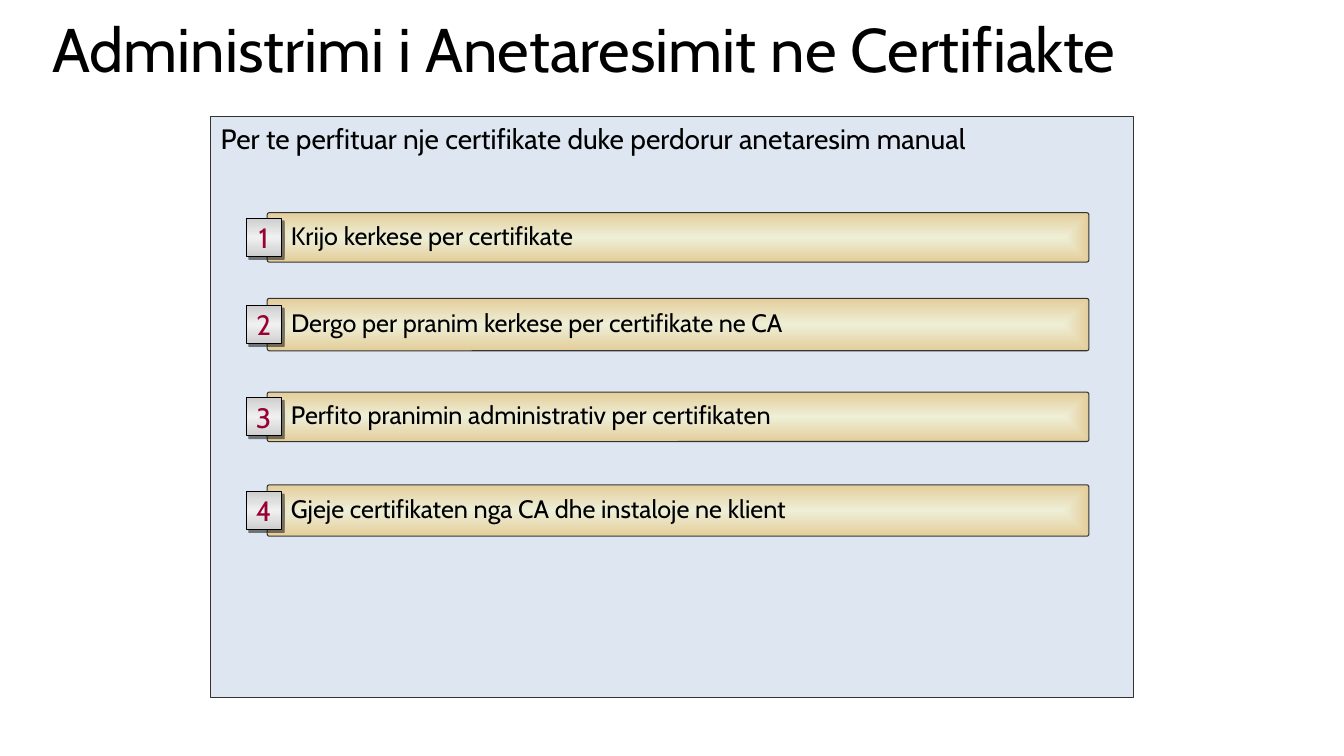
"""Builds a slide listing the four steps of manual certificate enrollment."""
from pptx import Presentation
from pptx.dml.color import RGBColor
from pptx.enum.shapes import MSO_SHAPE
from pptx.enum.text import MSO_ANCHOR, PP_ALIGN
from pptx.oxml import parse_xml
from pptx.oxml.ns import nsdecls, qn
from pptx.util import Inches, Pt

RECTANGLE, ROUNDED = MSO_SHAPE.RECTANGLE, MSO_SHAPE.ROUNDED_RECTANGLE
TOP, MIDDLE = MSO_ANCHOR.TOP, MSO_ANCHOR.MIDDLE
LEFT, CENTER = PP_ALIGN.LEFT, PP_ALIGN.CENTER
FONT = "Cabin"
COLORS = {
    "text": "000000", "number": "990033", "panel": "DEE7F1", "outline": "333333",
    "bar_center": "EEEFD7", "bar_edge": "E4CD9A",
    "badge_edge": "CECECE", "badge_center": "F0F0F0", "badge_outline": "000000",
}
BAR_STOPS = [(0, "bar_center"), (100, "bar_edge")]
BAR_SHADE = ('<a:path path="rect"><a:fillToRect l="50000" t="50000" '
             'r="50000" b="50000"/></a:path>')
BADGE_STOPS = [(0, "badge_edge"), (50, "badge_center"), (100, "badge_edge")]
BADGE_SHADE = '<a:lin ang="5400000" scaled="0"/>'
BADGE_SHADOW = (f'<a:outerShdw {nsdecls("a")} blurRad="0" dist="{Pt(2.8)}" dir="2700000" '
                'algn="ctr" rotWithShape="0"><a:srgbClr val="000000">'
                '<a:alpha val="50000"/></a:srgbClr></a:outerShdw>')

BAR_LEFT, BAR_WIDTH = 2.65, 8.15
BADGE_LEFT, BADGE_WIDTH, BADGE_HEIGHT = 2.44, 0.35, 0.38
STEPS = [
    (2.11, 0.49, "Krijo kerkese per certifikate"),
    (2.96, 0.52, "Dergo per pranim kerkese per certifikate ne CA"),
    (3.89, 0.49, "Perfito pranimin administrativ per certifikaten"),
    (4.81, 0.51, "Gjeje certifikaten nga CA dhe instaloje ne klient"),
]


def write(shape, text, size, color, line_spacing=1.0, alignment=LEFT, **frame_format):
    frame = shape.text_frame
    frame.text = text
    for name, value in frame_format.items():
        setattr(frame, name, value)
    paragraph = frame.paragraphs[0]
    paragraph.alignment = alignment
    paragraph.line_spacing = line_spacing
    font = paragraph.runs[0].font
    for name, value in {"name": FONT, "size": Pt(size), "bold": False}.items():
        setattr(font, name, value)
    font.color.rgb = RGBColor.from_string(COLORS[color])


def add_box(kind, box, outline, stops=(), shade=""):
    shape = slide.shapes.add_shape(kind, *map(Inches, box))
    shape.shadow.inherit = False
    if stops:
        marks = "".join(f'<a:gs pos="{position * 1000}"><a:srgbClr val="{COLORS[color]}"/></a:gs>'
                        for position, color in stops)
        gradient = parse_xml(f'<a:gradFill {nsdecls("a")} rotWithShape="1">'
                             f'<a:gsLst>{marks}</a:gsLst>{shade}</a:gradFill>')
        shape._element.spPr.find(qn("a:prstGeom")).addnext(gradient)
    shape.line.color.rgb = RGBColor.from_string(COLORS[outline])
    shape.line.width = Pt(0.75)
    return shape


presentation = Presentation()
presentation.slide_width = Inches(13.33)
presentation.slide_height = Inches(7.5)
slide = presentation.slides.add_slide(presentation.slide_layouts[5])

title = slide.shapes.title
for name, value in {"left": 0.42, "top": 0.2, "width": 12.6, "height": 1.16}.items():
    setattr(title, name, Inches(value))
write(title, "Administrimi i Anetaresimit ne Certifiakte", 44, "text", 0.8,
      vertical_anchor=TOP, word_wrap=True)

panel = add_box(RECTANGLE, (2.09, 1.16, 9.15, 5.76), "outline")
panel.fill.solid()
panel.fill.fore_color.rgb = RGBColor.from_string(COLORS["panel"])
write(panel, "Per te perfituar nje certifikate duke perdorur anetaresim manual", 20, "text",
      vertical_anchor=TOP, word_wrap=True)

for number, (top, height, step) in enumerate(STEPS, start=1):
    bar = add_box(ROUNDED, (BAR_LEFT, top, BAR_WIDTH, height), "outline", BAR_STOPS, BAR_SHADE)
    bar.adjustments[0] = 0.042
    write(bar, step, 18, "text", 0.9, vertical_anchor=MIDDLE, word_wrap=True,
          margin_left=Inches(0.23))

    badge_top = top + (height - BADGE_HEIGHT) / 2
    badge = add_box(RECTANGLE, (BADGE_LEFT, badge_top, BADGE_WIDTH, BADGE_HEIGHT),
                    "badge_outline", BADGE_STOPS, BADGE_SHADE)
    badge._element.spPr.find(qn("a:effectLst")).append(parse_xml(BADGE_SHADOW))
    write(badge, str(number), 20, "number", alignment=CENTER,
          vertical_anchor=MIDDLE, word_wrap=False)

presentation.save("out.pptx")
